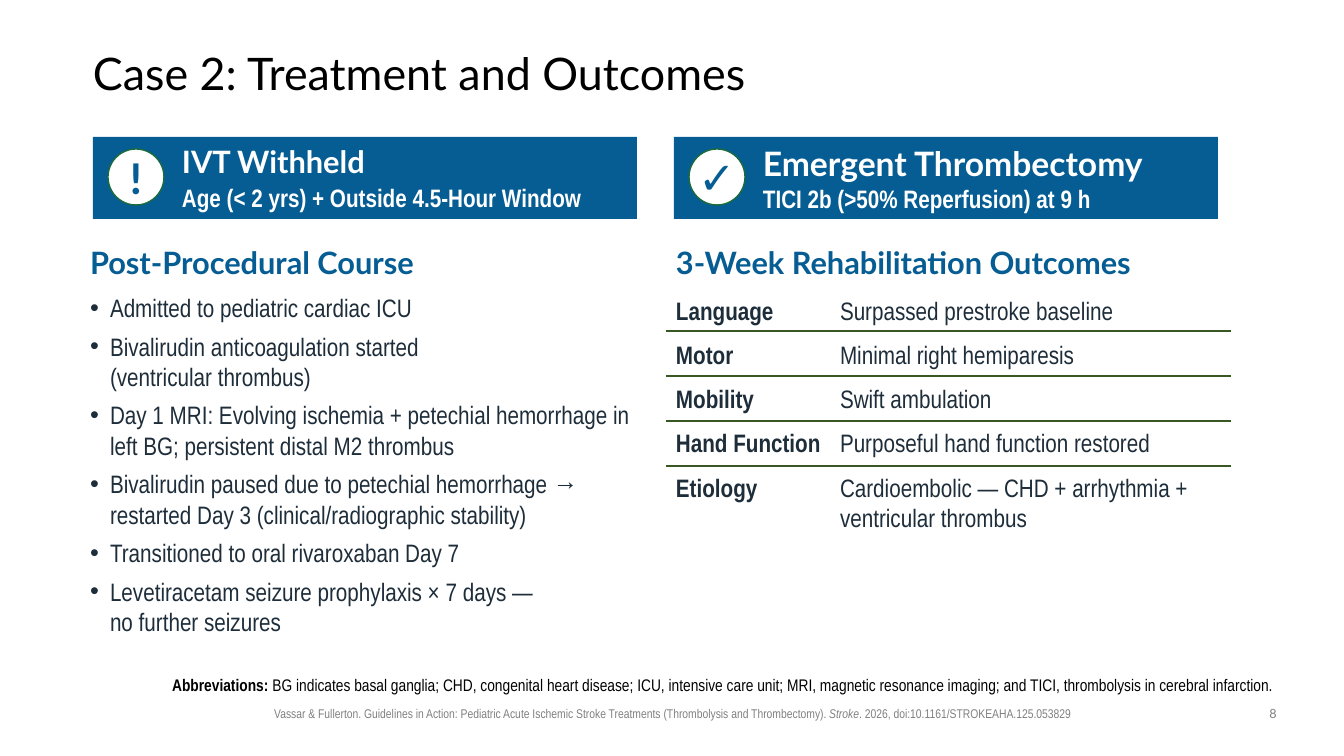
"""Build the slide on treatment and outcomes of case 2."""
from copy import deepcopy
from lxml import etree
from pptx import Presentation
from pptx.dml.color import RGBColor
from pptx.enum.shapes import MSO_CONNECTOR, MSO_SHAPE
from pptx.enum.text import MSO_ANCHOR, MSO_AUTO_SIZE, PP_ALIGN
from pptx.oxml.ns import qn
from pptx.util import Pt

RECT, OVAL, LINE = MSO_SHAPE.RECTANGLE, MSO_SHAPE.OVAL, MSO_CONNECTOR.STRAIGHT
TOP, MIDDLE, BOTTOM = MSO_ANCHOR.TOP, MSO_ANCHOR.MIDDLE, MSO_ANCHOR.BOTTOM
LEFT, CENTER = PP_ALIGN.LEFT, PP_ALIGN.CENTER
NO_FIT = MSO_AUTO_SIZE.NONE
PX = 914400 / 100.8
HEAD, BODY = "Lato", "Arial Narrow"
COLORS = {name: RGBColor.from_string(code) for name, code in {
    "blue": "065D93", "white": "FFFFFF", "black": "000000", "ink": "1E2D3A",
    "gray": "808080", "ring": "1A6B3C", "rule": "395723"}.items()}


def place(shape, x, y, w, h, anchor=TOP, inset=(10, 5, 10, 5)):
    shape.left, shape.top, shape.width, shape.height = (round(n * PX) for n in (x, y, w, h))
    frame = shape.text_frame
    frame.word_wrap, frame.auto_size, frame.vertical_anchor = True, NO_FIT, anchor
    (frame.margin_left, frame.margin_top,
     frame.margin_right, frame.margin_bottom) = (round(n * PX) for n in inset)
    return frame


def write(frame, text, size=18, color="ink", font=BODY, bold=False, italic=False,
          align=LEFT, before=0, after=0, line=1.0, hang=0, bullet=None, join=False):
    para = frame.paragraphs[-1]
    if not join:
        if para.runs:
            para = frame.add_paragraph()
        para.alignment, para.line_spacing = align, line
        para.space_before, para.space_after = Pt(before), Pt(after)
        props = para._p.get_or_add_pPr()
        props.set("marL", str(round(hang * PX)))
        props.set("indent", str(round(-hang * PX)))
        if bullet:
            etree.SubElement(props, qn("a:buFont")).set("typeface", "Arial")
            etree.SubElement(props, qn("a:buChar")).set("char", bullet)
        else:
            etree.SubElement(props, qn("a:buNone"))
    for i, part in enumerate(text.split("\n")):
        if i:
            para.add_line_break()
            para._p[-1].append(deepcopy(run._r.rPr))
        run = para.add_run()
        run.text = part
        run.font.size, run.font.name = Pt(size), font
        run.font.bold, run.font.italic = bold, italic
        run.font.color.rgb = COLORS[color]


deck = Presentation()
deck.slide_width, deck.slide_height = round(1344 * PX), round(756 * PX)
slide = deck.slides.add_slide(deck.slide_layouts[3])
shapes = slide.shapes
title, course, notes = slide.placeholders

frame = place(title, 93, 40, 1159, 73, MIDDLE, (0, 0, 0, 0))
write(frame, "Case 2: Treatment and Outcomes", size=32, color="black", font=HEAD, line=0.9)

banners = [
    ("!", "Calibri", "IVT Withheld", 22, 2, "Age (< 2 yrs) + Outside 4.5-Hour Window"),
    ("✓", HEAD, "Emergent Thrombectomy", 24, 0, "TICI 2b (>50% Reperfusion) at 9 h")]
for i, (sign, face, head, size, gap, detail) in enumerate(banners):
    x = 93 + 581 * i
    bar = shapes.add_shape(RECT, 0, 0, 0, 0)
    place(bar, x, 137, 544, 82)
    bar.fill.solid()
    bar.fill.fore_color.rgb = COLORS["blue"]
    bar.line.fill.background()
    icon = shapes.add_shape(OVAL, 0, 0, 0, 0)
    frame = place(icon, x + 15, 149, 56, 56, MIDDLE, (0, 0, 0, 0))
    frame.word_wrap = False
    write(frame, sign, size=32, color="blue", font=face, bold=True, align=CENTER)
    icon.fill.solid()
    icon.fill.fore_color.rgb = COLORS["white"]
    icon.line.color.rgb, icon.line.width = COLORS["ring"], Pt(1)
    bar.shadow.inherit = icon.shadow.inherit = False
    frame = place(shapes.add_textbox(0, 0, 0, 0), x + 79, 138, 446, 81)
    write(frame, head, size=size, color="white", font=HEAD, bold=True, after=gap)
    write(frame, detail, color="white", bold=True, after=2)

frame = place(course, 80, 239, 580, 406)
write(frame, "Post-Procedural Course", size=22, color="blue", font=HEAD, bold=True, after=2)
for item in [
        "Admitted to pediatric cardiac ICU",
        "Bivalirudin anticoagulation started\n(ventricular thrombus)",
        "Day 1 MRI: Evolving ischemia + petechial hemorrhage in left BG; "
        "persistent distal M2 thrombus",
        "Bivalirudin paused due to petechial hemorrhage → "
        "restarted Day 3 (clinical/radiographic stability)",
        "Transitioned to oral rivaroxaban Day 7",
        "Levetiracetam seizure prophylaxis × 7 days —\nno further seizures"]:
    write(frame, item, before=6, hang=20, bullet="•")

frame = place(shapes.add_textbox(0, 0, 0, 0), 666, 239, 580, 304)
write(frame, "3-Week Rehabilitation Outcomes", size=22, color="blue", font=HEAD, bold=True)
for label, result in [
        ("Language", "Surpassed prestroke baseline"),
        ("Motor", "Minimal right hemiparesis"),
        ("Mobility", "Swift ambulation"),
        ("Hand Function", "Purposeful hand function restored"),
        ("Etiology", "Cardioembolic — CHD + arrhythmia + ventricular thrombus")]:
    write(frame, label, bold=True, before=10, hang=164)
    write(frame, "\t" + result, join=True)

for i in range(4):
    y = 331 + 45 * i
    rule = shapes.add_connector(LINE, *(round(n * PX) for n in (666, y, 1231, y)))
    rule.line.color.rgb, rule.line.width = COLORS["rule"], Pt(1)
    etree.SubElement(rule._element.spPr, qn("a:effectLst"))

frame = place(notes, 149, 638, 1158, 62, BOTTOM, (0, 5, 10, 5))
write(frame, "Abbreviations: ", size=12, color="black", bold=True, align=CENTER, line=0.9)
write(frame, "BG indicates basal ganglia; CHD, congenital heart disease; ICU, intensive care "
      "unit; MRI, magnetic resonance imaging; and TICI, thrombolysis in cerebral infarction.",
      size=12, color="black", join=True)

frame = place(shapes.add_textbox(0, 0, 0, 0), 238, 701, 869, 25)
write(frame, "Vassar & Fullerton. Guidelines in Action: Pediatric Acute Ischemic Stroke "
      "Treatments (Thrombolysis and Thrombectomy). ", size=9, color="gray", align=CENTER)
write(frame, "Stroke", size=9, color="gray", italic=True, join=True)
write(frame, ". 2026, doi:10.1161/STROKEAHA.125.053829", size=9, color="gray", join=True)

frame = place(shapes.add_textbox(0, 0, 0, 0), 1252, 701, 42, 26)
write(frame, "8", size=9, color="gray", font=HEAD, align=CENTER)

deck.save("out.pptx")
